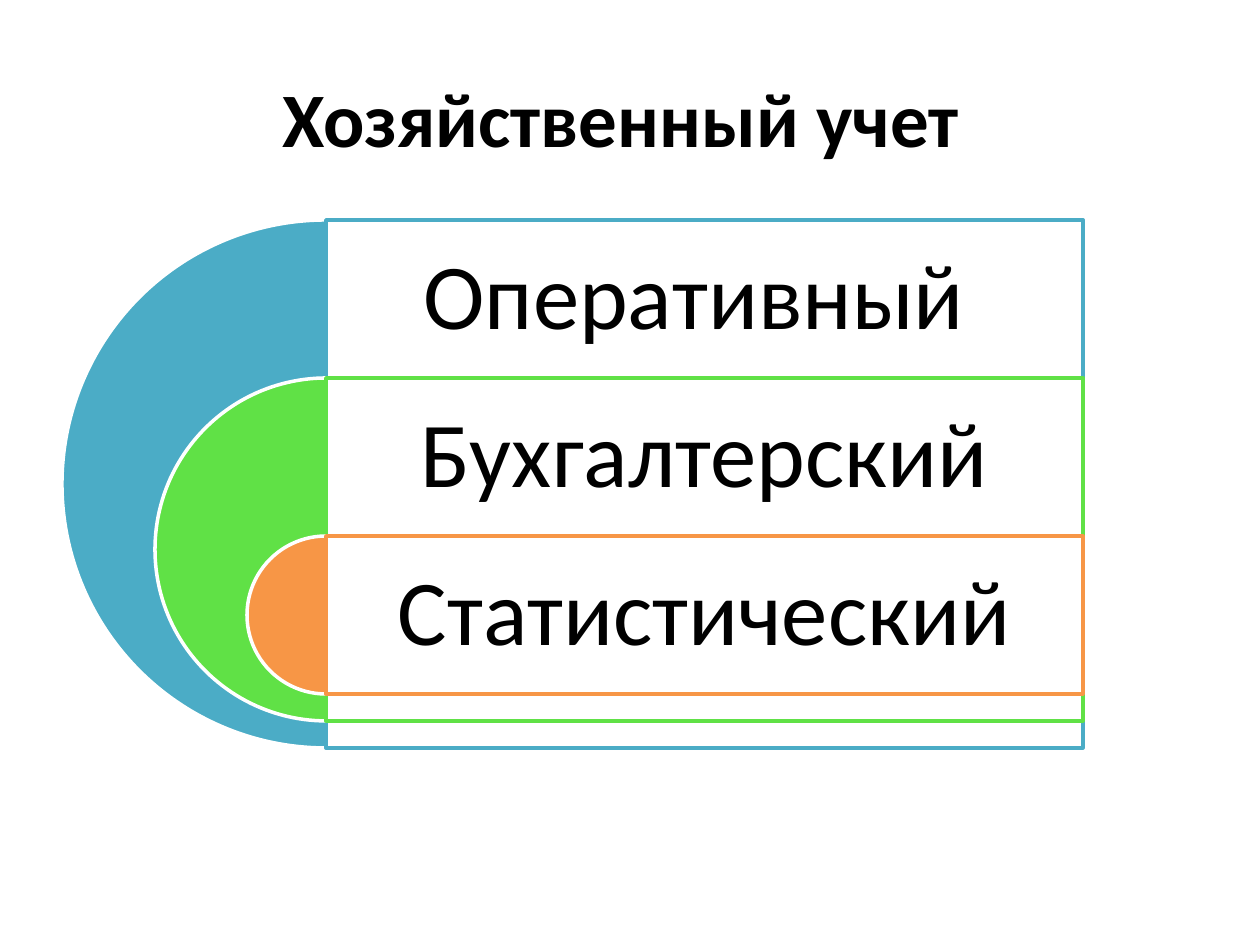
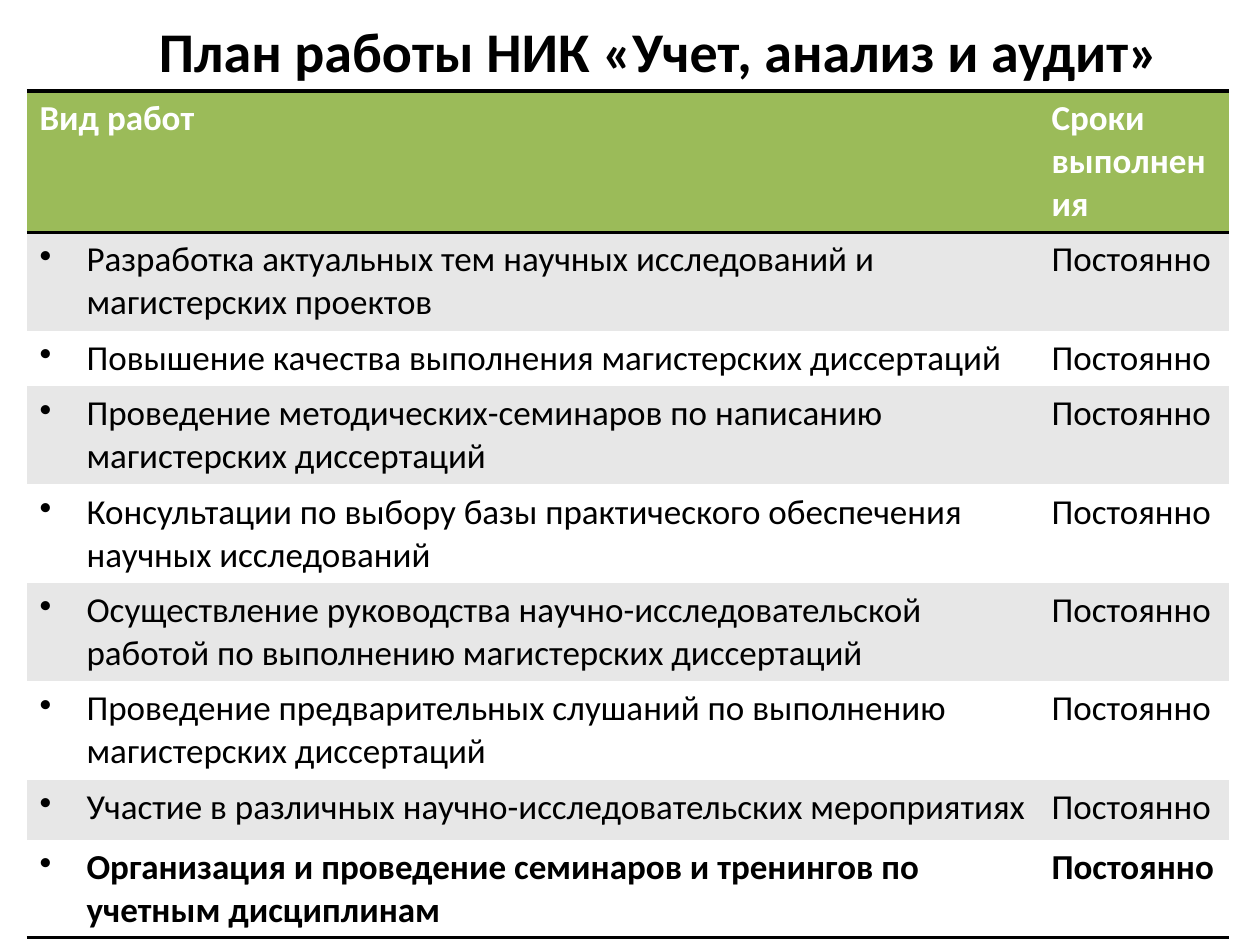
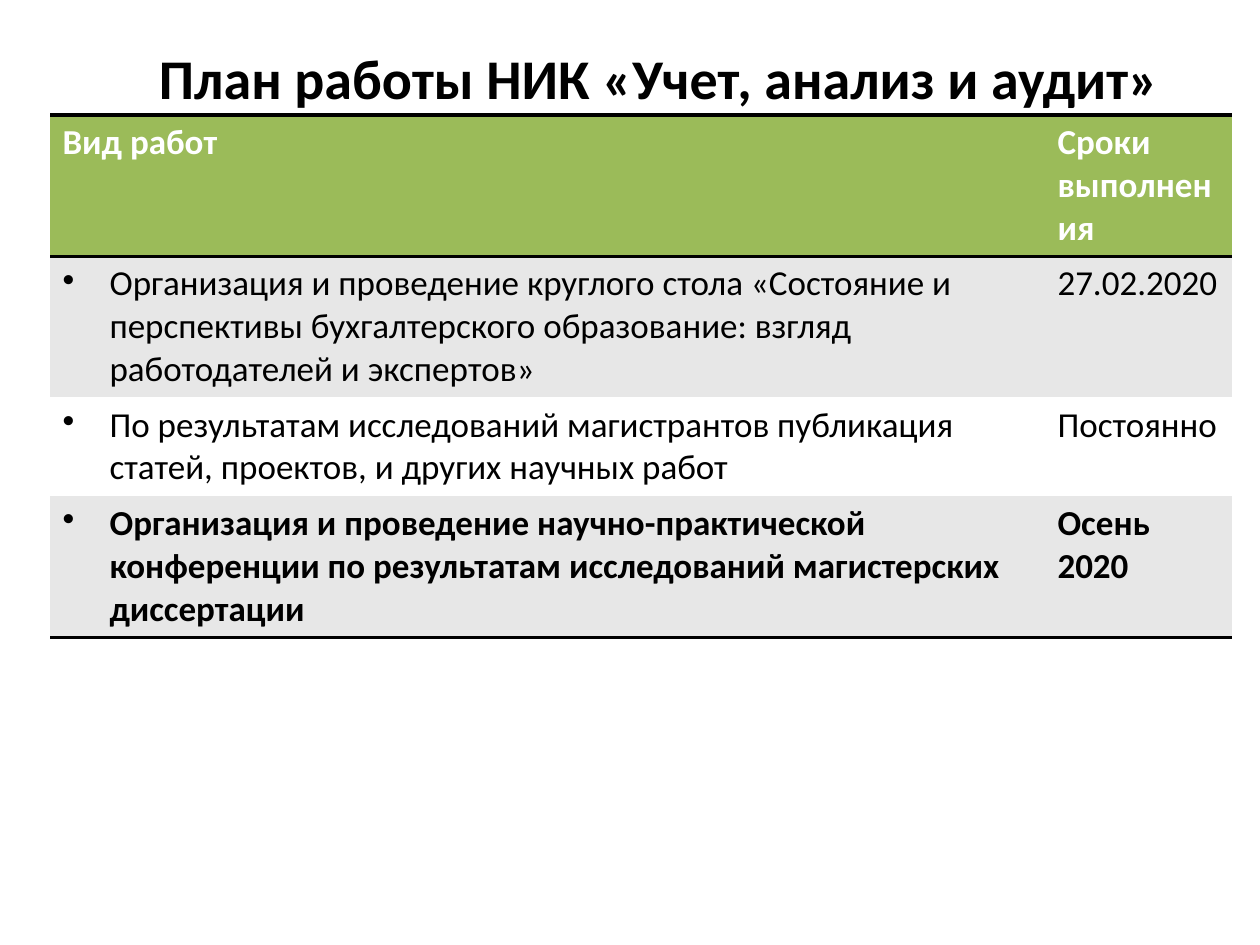
from dataclasses import dataclass

from lxml import etree
from pptx import Presentation
from pptx.dml.color import RGBColor
from pptx.enum.shapes import MSO_SHAPE
from pptx.enum.text import MSO_ANCHOR, MSO_AUTO_SIZE, PP_ALIGN
from pptx.oxml.ns import qn
from pptx.util import Pt

PIE, RECT = MSO_SHAPE.CHORD, MSO_SHAPE.RECTANGLE
PIE = MSO_SHAPE.PIE
MIDDLE, CENTER = MSO_ANCHOR.MIDDLE, PP_ALIGN.CENTER
NO_AUTOFIT = MSO_AUTO_SIZE.NONE
TITLE_ONLY = 5
PX = 914400 / 126
PLAIN_TABLE = "{2D5ABB26-0587-4C30-8999-92F81FD0307C}"


@dataclass(frozen=True)
class Theme:
    font: str = "Calibri"
    ink: str = "000000"
    paper: str = "FFFFFF"
    header: str = "9BBB59"
    band: str = "E7E7E7"
    operative: str = "4BACC6"
    accounting: str = "60E146"
    statistical: str = "F79646"
    big_title: int = 44
    plan_title: int = 32
    label: int = 53
    cell: int = 20
    line: int = 2


THEME = Theme()

ACCOUNT_TYPES = [
    ("Оперативный ", THEME.operative),
    ("Бухгалтерский", THEME.accounting),
    ("Статистический", THEME.statistical),
]

PLAN_TITLE = "План работы НИК «Учет, анализ и аудит»"
PLAN_HEADER = ("Вид работ", "Сроки выполнения")
ALWAYS = "Постоянно"

# Each work: description, deadline, row height in px
ONGOING_WORKS = [
    ("Разработка актуальных тем научных исследований и магистерских проектов", ALWAYS, 76),
    ("Повышение качества выполнения магистерских диссертаций", ALWAYS, 50),
    ("Проведение методических-семинаров по написанию магистерских диссертаций", ALWAYS, 76),
    ("Консультации по выбору базы практического обеспечения научных исследований", ALWAYS, 76),
    ("Осуществление руководства научно-исследовательской работой по выполнению "
     "магистерских диссертаций", ALWAYS, 76),
    ("Проведение предварительных слушаний по выполнению магистерских диссертаций", ALWAYS, 76),
    ("Участие в различных научно-исследовательских мероприятиях", ALWAYS, 60),
    ("Организация и проведение семинаров и тренингов по учетным дисциплинам", ALWAYS, 43),
]
EVENT_WORKS = [
    ("Организация и проведение круглого стола «Состояние и перспективы бухгалтерского "
     "образование: взгляд работодателей и экспертов»", "27.02.2020", 97),
    ("По результатам исследований магистрантов публикация статей, проектов, "
     "и других научных работ", ALWAYS, 76),
    ("Организация и проведение научно-практической конференции по результатам "
     "исследований магистерских диссертации", "Осень 2020", 76),
]


def px(length):
    return round(length * PX)


def rgb(color):
    return RGBColor.from_string(color)


def write(paragraph, text, size, color=THEME.ink, bold=False):
    paragraph.text = text
    for run in paragraph.runs:
        run.font.name = THEME.font
        run.font.size = Pt(size)
        run.font.bold = bold
        run.font.color.rgb = rgb(color)


def add_titled_slide(deck, text, size, box):
    slide = deck.slides.add_slide(deck.slide_layouts[TITLE_ONLY])
    title = slide.shapes.title
    title.left, title.top, title.width, title.height = map(px, box)
    frame = title.text_frame
    frame.auto_size = NO_AUTOFIT
    frame.vertical_anchor = MIDDLE
    write(frame.paragraphs[0], text, size, bold=True)
    frame.paragraphs[0].alignment = CENTER
    return slide


def add_filled(shapes, preset, box, fill, line):
    shape = shapes.add_shape(preset, *map(px, box))
    shape.shadow.inherit = False
    shape.fill.solid()
    shape.fill.fore_color.rgb = rgb(fill)
    shape.line.color.rgb = rgb(line)
    shape.line.width = Pt(THEME.line)
    return shape


def add_label(shapes, text, box):
    frame = shapes.add_textbox(*map(px, box)).text_frame
    frame.word_wrap = True
    frame.vertical_anchor = MIDDLE
    frame.margin_left = frame.margin_right = px(28)
    frame.margin_top = frame.margin_bottom = px(28)
    paragraph = frame.paragraphs[0]
    write(paragraph, text, THEME.label)
    paragraph.alignment = CENTER
    paragraph.line_spacing = 0.9
    # Space after as a share of the line
    after = etree.SubElement(paragraph._p.get_or_add_pPr(), qn("a:spcAft"))
    etree.SubElement(after, qn("a:spcPct"), val="35000")


def add_nested_targets(slide, box, layers):
    """Nested half discs, each with a panel to the right of its centre."""
    left, top, width, height = box
    step = height * 3 // 10
    shrink = (height - step) // (len(layers) - 1)
    axis = left + height // 2
    panel_width = left + width - axis
    shapes = slide.shapes.add_group_shape().shapes
    for i, (name, color) in enumerate(layers):
        diameter = height - i * shrink
        y = top + i * step
        half_disc = add_filled(shapes, PIE, (axis - diameter // 2, y, diameter, diameter),
                               color, THEME.paper)
        half_disc.adjustments[0] = 54
        half_disc.adjustments[1] = 162
        panel = add_filled(shapes, RECT, (axis, y, panel_width, diameter),
                           THEME.paper, color)
        tint = panel._element.spPr.find(qn("a:solidFill"))[0]
        etree.SubElement(tint, qn("a:alpha"), val="90000")
        add_label(shapes, name, (axis, y, panel_width, step))


def add_border(cell, side):
    line = etree.SubElement(cell._tc.get_or_add_tcPr(), qn("a:" + side),
                            w=str(Pt(THEME.line)))
    fill = etree.SubElement(line, qn("a:solidFill"))
    etree.SubElement(fill, qn("a:srgbClr"), val=THEME.ink)


def add_bullet(paragraph):
    properties = paragraph._p.get_or_add_pPr()
    properties.set("marL", str(px(47)))
    properties.set("indent", str(-px(47)))
    etree.SubElement(properties, qn("a:buChar"), char="•")


def add_plan_table(slide, box, works, deadline_width):
    rows = [(*PLAN_HEADER, 62), *works]
    last = len(rows) - 1
    frame = slide.shapes.add_table(len(rows), 2, *map(px, box))
    table = frame.table
    table._tbl.tblPr.find(qn("a:tableStyleId")).text = PLAIN_TABLE
    table.columns[0].width = px(box[2] - deadline_width)
    table.columns[1].width = px(deadline_width)
    for i, (*texts, row_height) in enumerate(rows):
        table.rows[i].height = px(row_height)
        is_header = i == 0
        if is_header:
            fill, sides = THEME.header, ("lnT", "lnB")
        else:
            fill = THEME.band if i % 2 else THEME.paper
            sides = ("lnB",) if i == last else ()
        for j, text in enumerate(texts):
            cell = table.cell(i, j)
            for side in sides:
                add_border(cell, side)
            cell.fill.solid()
            cell.fill.fore_color.rgb = rgb(fill)
            paragraph = cell.text_frame.paragraphs[0]
            write(paragraph, text, THEME.cell,
                  THEME.paper if is_header else THEME.ink, bold=i in (0, last))
            if j == 0 and not is_header:
                add_bullet(paragraph)
    frame.height = px(box[3])


def main():
    deck = Presentation()
    deck.slide_width, deck.slide_height = px(1260), px(945)

    # Types of accounting
    types = add_titled_slide(deck, "Хозяйственный учет ", THEME.big_title,
                             (63, 38, 1134, 157))
    add_nested_targets(types, (62, 220, 1021, 528), ACCOUNT_TYPES)

    # Work plan: title height, table box, works, deadline column
    plans = [
        (100, (27, 91, 1202, 833), ONGOING_WORKS, 190),
        (154, (50, 115, 1182, 513), EVENT_WORKS, 187),
    ]
    for title_height, box, works, deadline_width in plans:
        plan = add_titled_slide(deck, PLAN_TITLE, THEME.plan_title,
                                (76, 0, 1167, title_height))
        add_plan_table(plan, box, works, deadline_width)

    deck.save("out.pptx")


if __name__ == "__main__":
    main()
